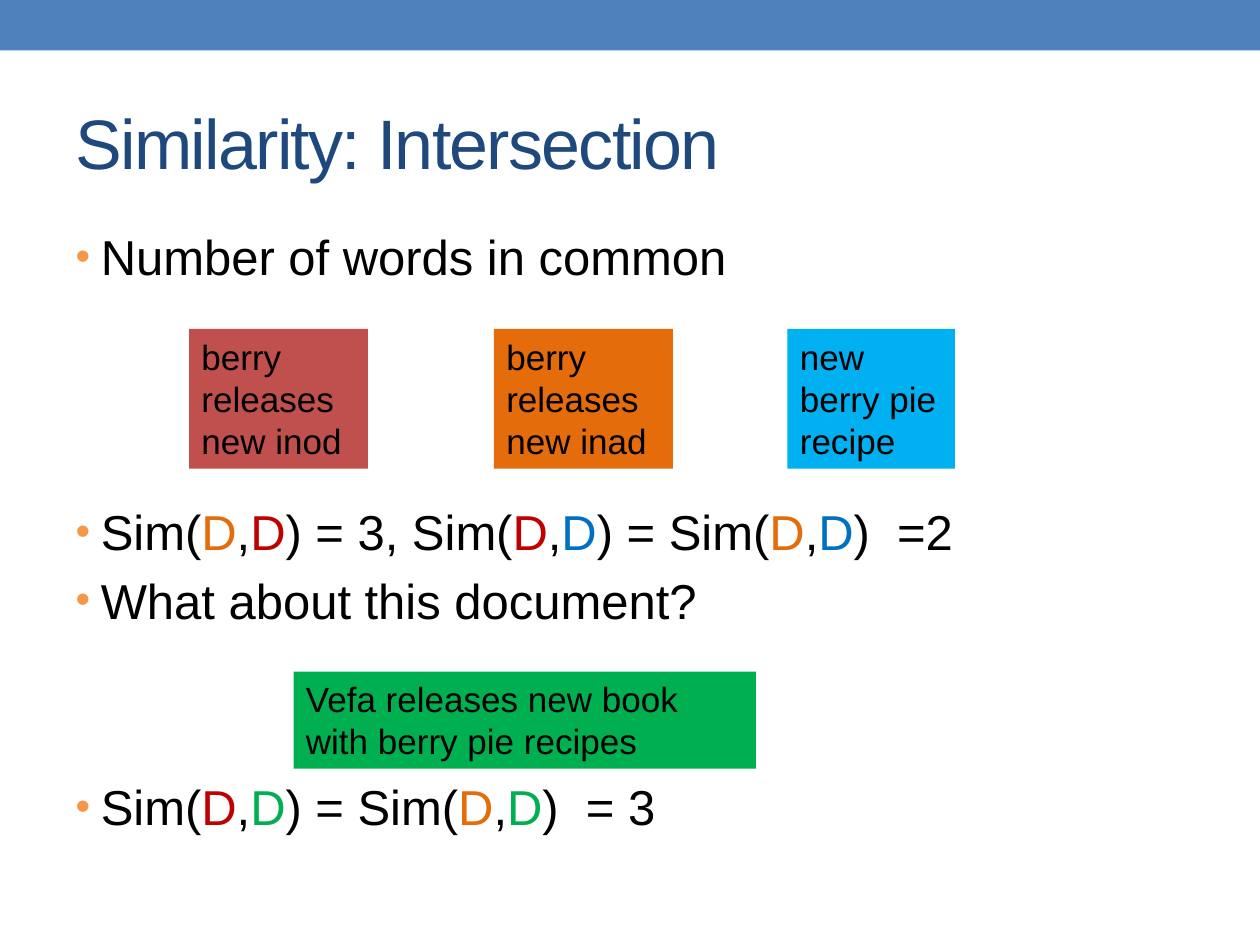
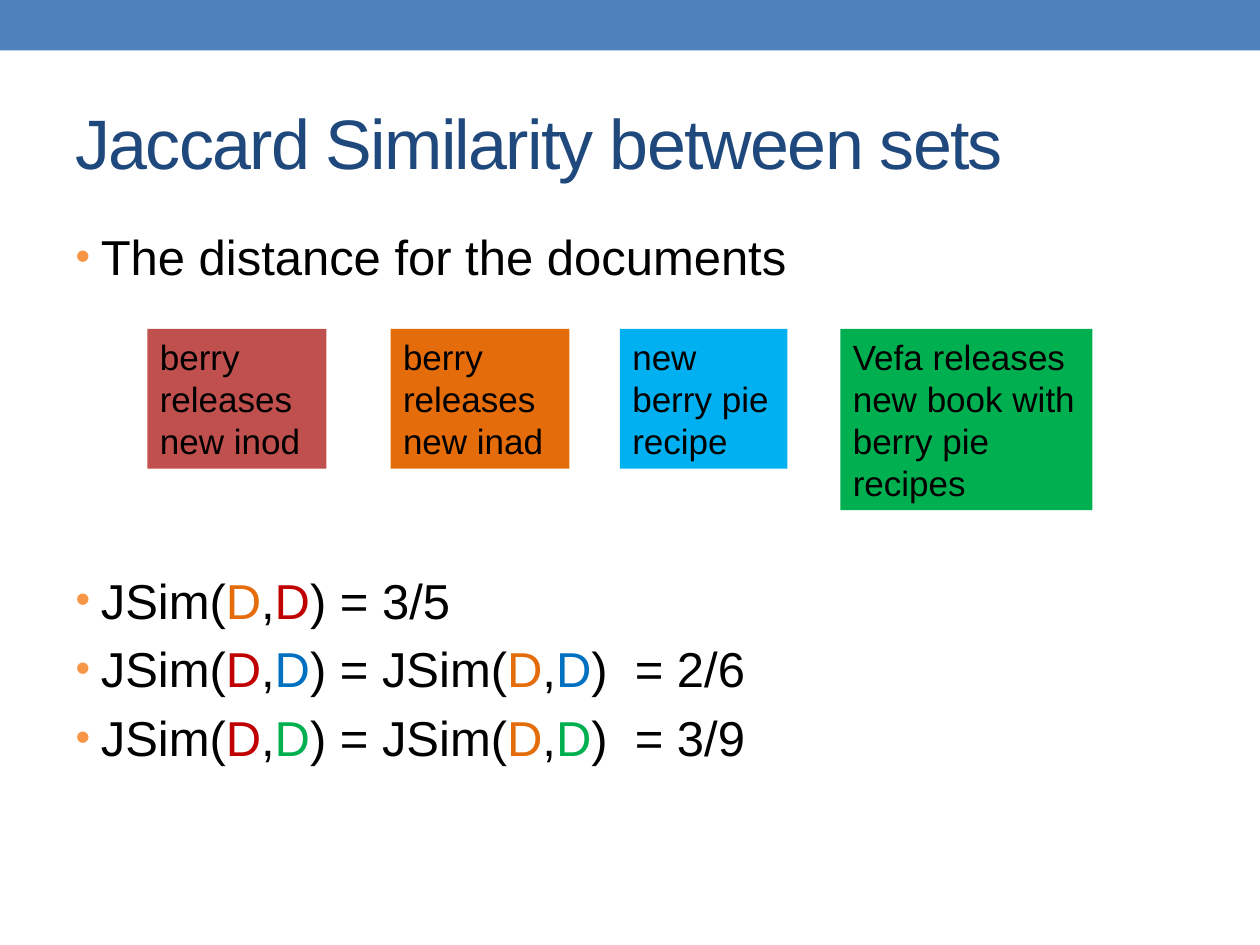
import lxml.etree
import pptx
import pptx.dml.color
import pptx.enum.shapes
import pptx.enum.text
import pptx.oxml.ns
import pptx.util

RGBColor = pptx.dml.color.RGBColor
Inches, Pt = pptx.util.Inches, pptx.util.Pt

BLUE_BAND = RGBColor(0x4F, 0x81, 0xBD)
NAVY = RGBColor(0x1F, 0x49, 0x7D)
BLACK = RGBColor(0, 0, 0)
BRICK = RGBColor(0xC0, 0x50, 0x4D)
RED = RGBColor(0xC0, 0, 0)
ORANGE = RGBColor(0xE4, 0x6C, 0x0A)
SKY = RGBColor(0, 0xB0, 0xF0)
BLUE = RGBColor(0, 0x70, 0xC0)
GREEN = RGBColor(0, 0xB0, 0x50)
BULLET_COLOR = RGBColor(0xF7, 0x96, 0x46)

FONT = "Arial"
SLIDE_W, SLIDE_H = 10, 7.5
BAND_H = 0.4
TITLE_BOX = (0.5, 0.58, 9, 1.08)
BODY_BOX = (0.5, 1.75, 9, 5.33)
DOCS_TOP = 2.61
LINE_PITCH, LINE_SPACE = 39.2, 5.8  # points from line to line, and above a line

DOCUMENTS = {
    "inod": ("berry releases new inod", BRICK),
    "inad": ("berry releases new inad", ORANGE),
    "pie": ("new berry pie recipe", SKY),
    "book": ("Vefa releases new book with berry pie recipes", GREEN),
}

# bullets: (free lines above, text, colours of each D in turn)
# documents: (key, left, top, width, height)
SLIDES = [
    {
        "title": "Similarity: Intersection",
        "bullets": [
            (0, "Number of words in common", ()),
            (3, "Sim(D,D) = 3, Sim(D,D) = Sim(D,D)  =2",
             (ORANGE, RED, RED, BLUE, ORANGE, BLUE)),
            (0, "What about this document?", ()),
            (2, "Sim(D,D) = Sim(D,D)  = 3", (RED, GREEN, ORANGE, GREEN)),
        ],
        "documents": [
            ("inod", 1.5, DOCS_TOP, 1.42, 1.11),
            ("inad", 3.92, DOCS_TOP, 1.42, 1.11),
            ("pie", 6.25, DOCS_TOP, 1.33, 1.11),
            ("book", 2.33, 5.33, 3.67, 0.77),
        ],
    },
    {
        "title": "Jaccard Similarity between sets",
        "bullets": [
            (0, "The distance for the documents", ()),
            (4, "JSim(D,D) = 3/5", (ORANGE, RED)),
            (0, "JSim(D,D) = JSim(D,D)  = 2/6", (RED, BLUE, ORANGE, BLUE)),
            (0, "JSim(D,D) = JSim(D,D)  = 3/9", (RED, GREEN, ORANGE, GREEN)),
        ],
        "documents": [
            ("inod", 1.17, DOCS_TOP, 1.42, 1.11),
            ("inad", 3.1, DOCS_TOP, 1.42, 1.11),
            ("pie", 4.92, DOCS_TOP, 1.33, 1.11),
            ("book", 6.67, DOCS_TOP, 2, 1.44),
        ],
    },
]


def place(shape, box):
    shape.left, shape.top, shape.width, shape.height = map(Inches, box)


def style(paragraph, size, color):
    paragraph.font.name = FONT
    paragraph.font.size = Pt(size)
    paragraph.font.color.rgb = color


def add_block(slide, box, color):
    block = slide.shapes.add_shape(
        pptx.enum.shapes.MSO_SHAPE.RECTANGLE, *map(Inches, box))
    block.shadow.inherit = False
    block.fill.solid()
    block.fill.fore_color.rgb = color
    block.line.fill.background()
    return block


def add_title(slide, text):
    title = slide.shapes.title
    place(title, TITLE_BOX)
    title.text = text
    title.text_frame.vertical_anchor = pptx.enum.text.MSO_ANCHOR.MIDDLE
    heading = title.text_frame.paragraphs[0]
    heading.alignment = pptx.enum.text.PP_ALIGN.LEFT
    style(heading, 40, NAVY)
    heading.runs[0]._r.get_or_add_rPr().set("spc", "-100")


def format_bullet(paragraph):
    """Hang the template's bullet by 0.2 inch, in orange at 85 % size."""
    properties = paragraph._p.get_or_add_pPr()
    properties.set("marL", str(Inches(0.2)))
    properties.set("indent", str(Inches(-0.2)))
    qn = pptx.oxml.ns.qn
    color = lxml.etree.SubElement(properties, qn("a:buClr"))
    lxml.etree.SubElement(color, qn("a:srgbClr"), val=str(BULLET_COLOR))
    lxml.etree.SubElement(properties, qn("a:buSzPct"), val="85000")


def add_bullets(slide, bullets):
    body = slide.placeholders[1]
    place(body, BODY_BOX)
    frame = body.text_frame
    frame.auto_size = pptx.enum.text.MSO_AUTO_SIZE.NONE
    for index, (free_lines, text, colors) in enumerate(bullets):
        bullet = frame.add_paragraph() if index else frame.paragraphs[0]
        if free_lines:
            bullet.space_before = Pt(free_lines * LINE_PITCH + LINE_SPACE)
        format_bullet(bullet)
        style(bullet, 28, BLACK)
        pieces = text.split("D")
        bullet.add_run().text = pieces[0]
        for color, piece in zip(colors, pieces[1:]):
            document = bullet.add_run()
            document.text = "D"
            document.font.color.rgb = color
            bullet.add_run().text = piece


def add_document(slide, key, *box):
    text, color = DOCUMENTS[key]
    frame = add_block(slide, box, color).text_frame
    frame.word_wrap = True
    frame.vertical_anchor = pptx.enum.text.MSO_ANCHOR.TOP
    frame.text = text
    words = frame.paragraphs[0]
    words.alignment = pptx.enum.text.PP_ALIGN.LEFT
    style(words, 20, BLACK)


def main():
    deck = pptx.Presentation()
    deck.slide_width, deck.slide_height = Inches(SLIDE_W), Inches(SLIDE_H)
    for content in SLIDES:
        slide = deck.slides.add_slide(deck.slide_layouts[1])
        add_block(slide, (0, 0, SLIDE_W, BAND_H), BLUE_BAND)
        add_title(slide, content["title"])
        add_bullets(slide, content["bullets"])
        for document in content["documents"]:
            add_document(slide, *document)
    deck.save("out.pptx")


if __name__ == "__main__":
    main()
